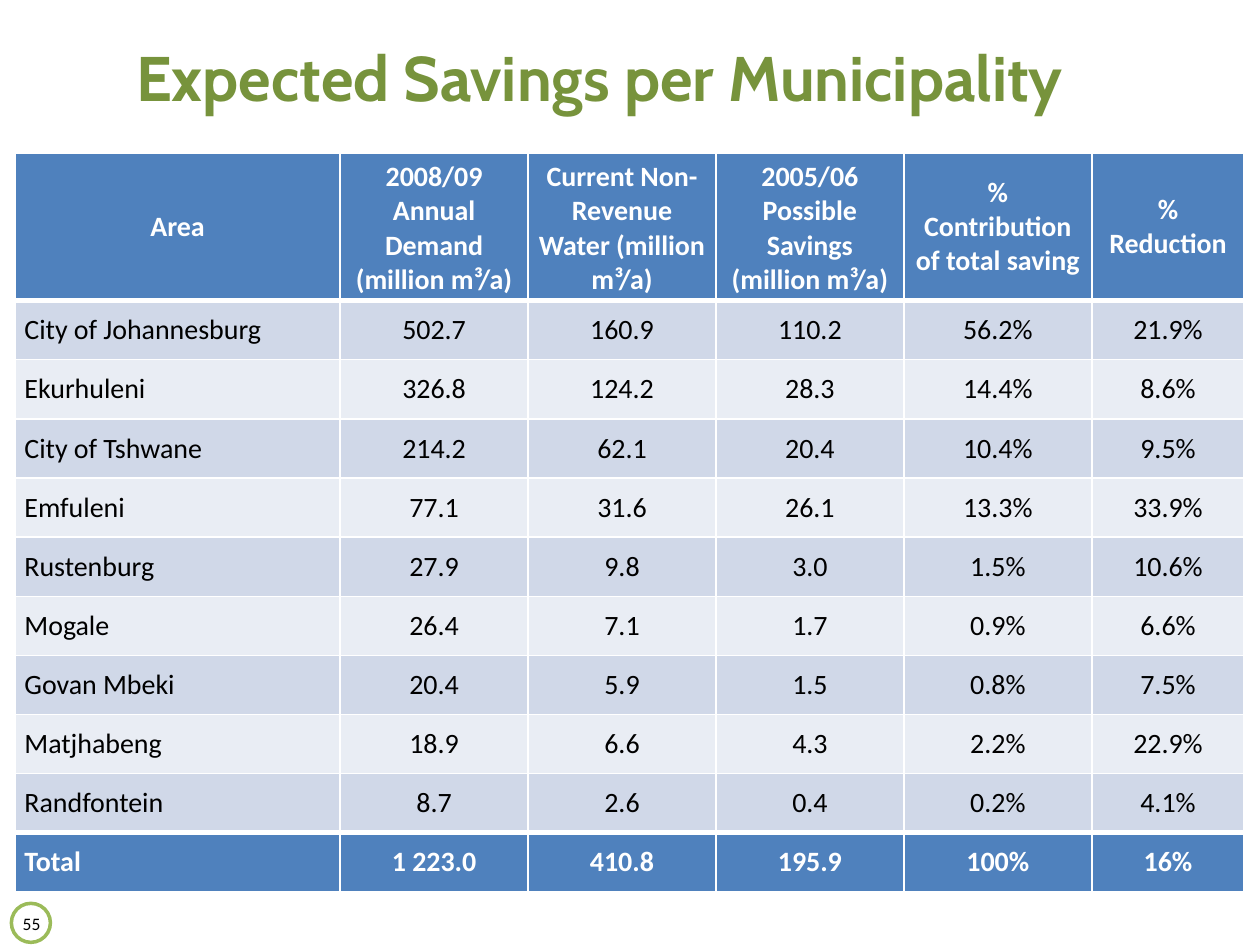
"""Build the slide of expected water savings per municipality."""
from lxml.etree import SubElement
from pptx import Presentation
from pptx.dml.color import RGBColor
from pptx.enum.shapes import MSO_SHAPE
from pptx.enum.text import MSO_ANCHOR as ANCHOR, PP_ALIGN as ALIGN
from pptx.oxml.ns import qn
from pptx.util import Pt

COLORS = {
    "title": "77933C",
    "ring": "9BBB59",
    "strong": "4F81BD",
    "odd": "D0D8E8",
    "even": "E9EDF4",
    "white": "FFFFFF",
    "black": "000000",
}
ROWS = [
    ["Area", "2008/09 Annual Demand (million m³/a)",
     "Current Non-Revenue Water (million m³/a)",
     "2005/06 Possible Savings (million m³/a)",
     "% Contribution of total saving", "% Reduction"],
    ["City of Johannesburg", "502.7", "160.9", "110.2", "56.2%", "21.9%"],
    ["Ekurhuleni", "326.8", "124.2", "28.3", "14.4%", "8.6%"],
    ["City of Tshwane", "214.2", "62.1", "20.4", "10.4%", "9.5%"],
    ["Emfuleni", "77.1", "31.6", "26.1", "13.3%", "33.9%"],
    ["Rustenburg", "27.9", "9.8", "3.0", "1.5%", "10.6%"],
    ["Mogale", "26.4", "7.1", "1.7", "0.9%", "6.6%"],
    ["Govan Mbeki", "20.4", "5.9", "1.5", "0.8%", "7.5%"],
    ["Matjhabeng", "18.9", "6.6", "4.3", "2.2%", "22.9%"],
    ["Randfontein", "8.7", "2.6", "0.4", "0.2%", "4.1%"],
    ["Total", "1 223.0", "410.8", "195.9", "100%", "16%"],
]
COLUMN_WIDTHS = [185.8, 107.4, 107.4, 107.4, 107.4, 87.1]
HEADER_HEIGHT, ROW_HEIGHT = 82.2, 33.8


def format_text(paragraph, color, align, **font_values):
    paragraph.alignment = align
    for name, value in font_values.items():
        setattr(paragraph.font, name, value)
    paragraph.font.color.rgb = RGBColor.from_string(COLORS[color])


def add_borders(cell, widths):
    properties = cell._tc.get_or_add_tcPr()
    for side, width in widths.items():
        border = SubElement(properties, qn(f"a:ln{side}"), w=str(Pt(width)))
        border_fill = SubElement(border, qn("a:solidFill"))
        SubElement(border_fill, qn("a:srgbClr"), val=COLORS["white"])


prs = Presentation()
prs.slide_width, prs.slide_height = Pt(720), Pt(540)
slide = prs.slides.add_slide(prs.slide_layouts[5])

ring = slide.shapes.add_shape(MSO_SHAPE.OVAL, Pt(6.5), Pt(516.2), Pt(22.3), Pt(22.3))
ring.shadow.inherit = False
ring.fill.solid()
ring.fill.fore_color.rgb = RGBColor.from_string(COLORS["white"])
ring.line.color.rgb = RGBColor.from_string(COLORS["ring"])
ring.line.width = Pt(2)

page_number = slide.shapes.add_textbox(Pt(6.5), Pt(518.4), Pt(23), Pt(14.4)).text_frame
page_number.word_wrap = True
page_number.margin_left = page_number.margin_right = 0
page_number.text = "55"
format_text(page_number.paragraphs[0], "black", ALIGN.CENTER, name="Calibri", size=Pt(10))

title = slide.shapes.title
title_box = {"left": 70.6, "top": 7.2, "width": 649.4, "height": 51.1}
for name, value in title_box.items():
    setattr(title, name, Pt(value))
title.text_frame.text = "Expected Savings per Municipality"
title.text_frame.vertical_anchor = ANCHOR.MIDDLE
title.text_frame.paragraphs[0].line_spacing = 1.5
format_text(title.text_frame.paragraphs[0], "title", ALIGN.LEFT,
            name="Cabin", size=Pt(36), bold=True)

last = len(ROWS) - 1
savings = slide.shapes.add_table(
    len(ROWS), len(COLUMN_WIDTHS), Pt(8.6), Pt(87.8),
    Pt(sum(COLUMN_WIDTHS)), Pt(HEADER_HEIGHT + last * ROW_HEIGHT)).table
for column, width in zip(savings.columns, COLUMN_WIDTHS):
    column.width = Pt(width)

for r, row in enumerate(ROWS):
    savings.rows[r].height = Pt(ROW_HEIGHT if r else HEADER_HEIGHT)
    strong = r in (0, last)
    fill = "strong" if strong else "odd" if r % 2 else "even"
    borders = {"L": 1, "R": 1,
               "T": 3 if r in (1, last) else 1,
               "B": 3 if r in (0, last - 1) else 1}
    for c, text in enumerate(row):
        cell = savings.cell(r, c)
        cell.text = text
        cell.vertical_anchor = ANCHOR.MIDDLE
        cell.margin_left = cell.margin_right = Pt(5.4)
        add_borders(cell, borders)
        cell.fill.solid()
        cell.fill.fore_color.rgb = RGBColor.from_string(COLORS[fill])
        format_text(cell.text_frame.paragraphs[0], "white" if strong else "black",
                    ALIGN.JUSTIFY if r and not c else ALIGN.CENTER,
                    name="Calibri", size=Pt(16), bold=strong)

prs.save("out.pptx")
